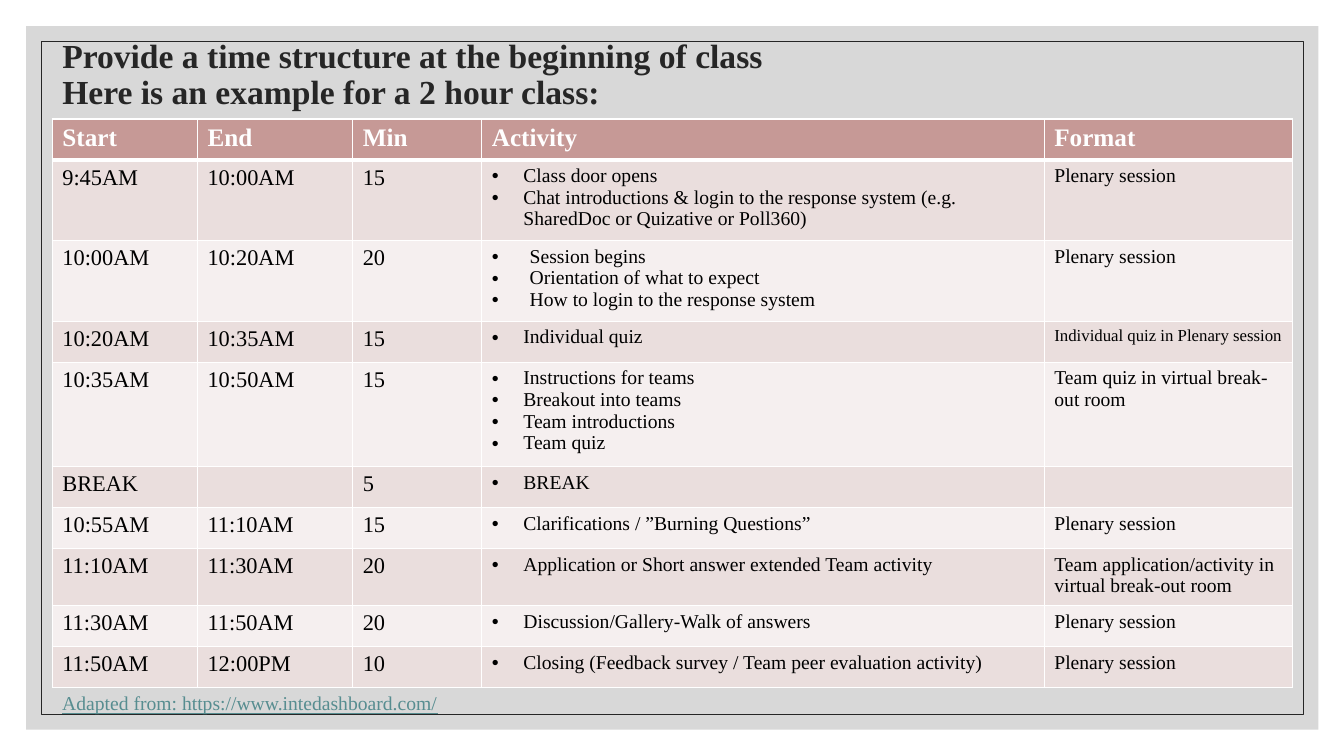
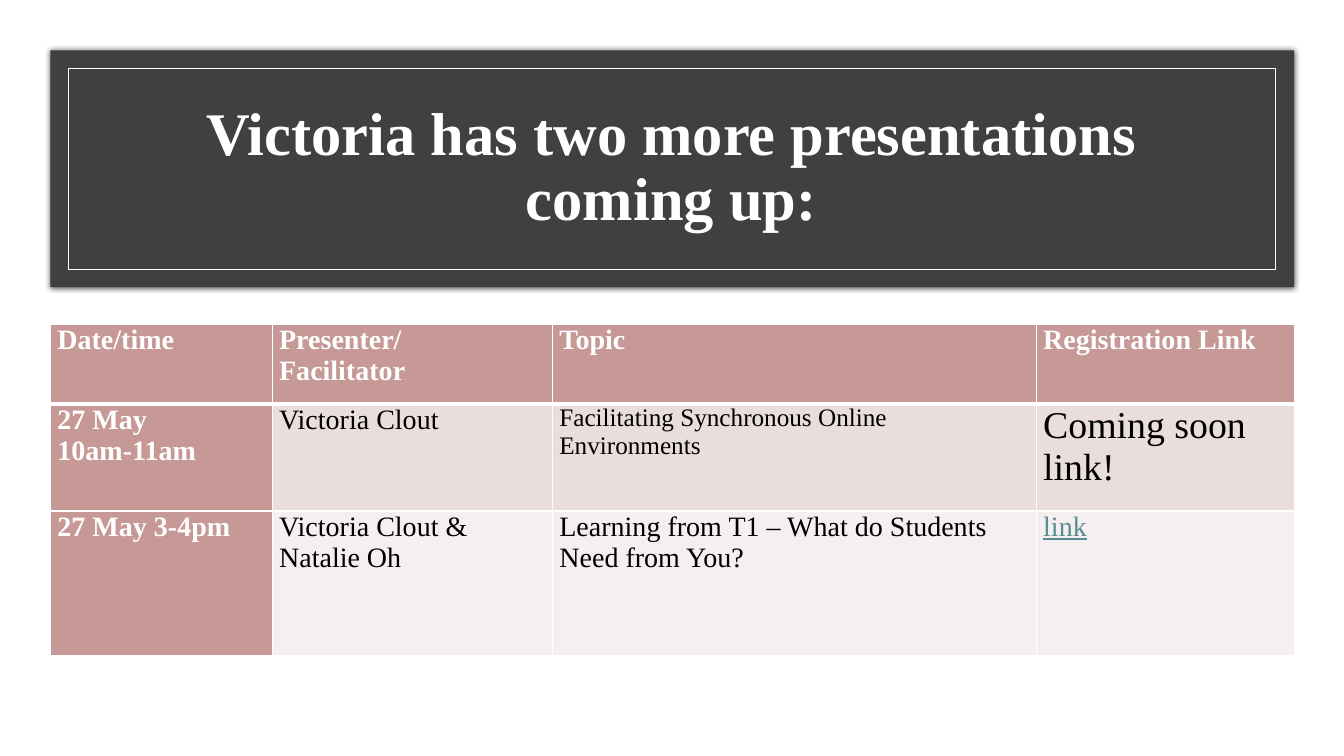
"""Build two slides: a class timetable and a list of coming talks."""
import dataclasses

import lxml.etree
import pptx
import pptx.dml.color
import pptx.enum.shapes
import pptx.enum.text
import pptx.oxml.ns
import pptx.util

Pt = pptx.util.Pt
Rgb = pptx.dml.color.RGBColor.from_string
qn = pptx.oxml.ns.qn
sub = lxml.etree.SubElement
RECT = pptx.enum.shapes.MSO_SHAPE.RECTANGLE
ALIGN = pptx.enum.text.PP_ALIGN
MIDDLE = pptx.enum.text.MSO_ANCHOR.MIDDLE


@dataclasses.dataclass(frozen=True)
class Theme:
    """Colours, font and type sizes."""
    font: str = "Times New Roman"
    white: str = "FFFFFF"
    black: str = "000000"
    ink: str = "262626"
    panel: str = "BFBFBF"
    band: str = "404040"
    head: str = "C69996"
    odd: str = "EADEDD"
    even: str = "F5EFEF"
    link: str = "578D90"
    title: float = 24
    banner: float = 43.2
    large: float = 27
    mid: float = 20
    label: float = 18
    time: float = 16
    body: float = 14
    small: float = 12


theme = Theme()


def write(frame, text, size, color, bold=False, dent=0):
    """Put styled text in a frame, bulleted if it has an indent."""
    frame.text = text
    for para in frame.paragraphs:
        if dent:
            props = para._p.get_or_add_pPr()
            props.set("marL", str(int(Pt(dent))))
            props.set("indent", str(-int(Pt(dent))))
            sub(props, qn("a:buFont"), typeface="Arial")
            sub(props, qn("a:buChar"), char="•")
        for run in para.runs:
            font = run.font
            font.name, font.size, font.bold = theme.font, Pt(size), bold
            font.color.rgb = Rgb(color)
            font.underline = color == theme.link


def grid(slide, spot, cols, rows, data, sizes, pad, side=False, dents={}, links=()):
    """Add a ruled table; sizes go by cell, then by column."""
    frame = slide.shapes.add_table(len(rows), len(cols), Pt(spot[0]), Pt(spot[1]),
                                   Pt(sum(cols)), Pt(sum(rows)))
    table = frame.table
    table.horz_banding, table.first_col = False, side
    for col, width in zip(table.columns, cols):
        col.width = Pt(width)
    for row, height in zip(table.rows, rows):
        row.height = Pt(height)
    for r, line in enumerate(data):
        for c, text in enumerate(line):
            cell = table.cell(r, c)
            cell.margin_left = cell.margin_right = Pt(pad[0])
            cell.margin_top = cell.margin_bottom = Pt(pad[1])
            for edge in "LRTB":
                thick = 3 if (r, edge) in ((0, "B"), (1, "T")) else 1
                rule = sub(cell._tc.get_or_add_tcPr(), qn("a:ln" + edge), w=str(Pt(thick)))
                sub(sub(rule, qn("a:solidFill")), qn("a:srgbClr"), val=theme.white)
            top = r == 0 or (side and c == 0)
            cell.fill.solid()
            cell.fill.fore_color.rgb = Rgb(
                theme.head if top else theme.odd if r % 2 else theme.even)
            color = theme.white if top else theme.link if (r, c) in links else theme.black
            size = sizes.get((r, c), sizes["head"] if r == 0 else sizes[c])
            write(cell.text_frame, text, size, color, top, dents.get((r, c), 0))


deck = pptx.Presentation()
deck.slide_width, deck.slide_height = Pt(960), Pt(540)
plan, talks = [deck.slides.add_slide(deck.slide_layouts[6]) for _ in range(2)]

boxes = {}
for name, slide, spot, fill, edge in (
    ("panel", plan, (18.72, 18.72, 923, 502.56), theme.panel, None),
    ("frame", plan, (29.5, 29.5, 901.4, 481), None, theme.ink),
    ("band", talks, (36, 36, 888.4, 169.2), theme.band, None),
    ("inset", talks, (48.6, 48.8, 862.6, 143.5), None, theme.white),
):
    box = slide.shapes.add_shape(RECT, *map(Pt, spot))
    box.shadow.inherit = False
    if fill:
        box.fill.solid()
        box.fill.fore_color.rgb = Rgb(fill)
    else:
        box.fill.background()
    if edge:
        box.line.color.rgb = Rgb(edge)
        box.line.width = Pt(0.5)
    else:
        box.line.fill.background()
    boxes[name] = box

tint = boxes["panel"]._element.spPr.find(qn("a:solidFill"))[0]
sub(tint, qn("a:alpha"), val="60000")
glow = sub(boxes["band"]._element.spPr.find(qn("a:effectLst")), qn("a:outerShdw"),
           blurRad=str(Pt(4)), dist="0", dir="0", algn="ctr", rotWithShape="0")
sub(sub(glow, qn("a:srgbClr"), val=theme.black), qn("a:alpha"), val="66000")

for slide, spot, text, size, color, align in (
    (plan, (37.4, 0, 838.8, 108),
     "Provide a time structure at the beginning of class\vHere is an example for a 2 hour class:",
     theme.title, theme.ink, ALIGN.LEFT),
    (talks, (83.5, 66.2, 792, 108), "Victoria has two more presentations coming up:",
     theme.banner, theme.white, ALIGN.CENTER),
):
    frame = slide.shapes.add_textbox(*map(Pt, spot)).text_frame
    frame.word_wrap = True
    frame.vertical_anchor = MIDDLE
    write(frame, text, size, color, True)
    frame.paragraphs[0].alignment = align
    frame.paragraphs[0].line_spacing = 0.9

hours = [
    ("Start", "End", "Min", "Activity", "Format"),
    ("9:45AM", "10:00AM", "15",
     "Class door opens\nChat introductions & login to the response system (e.g. "
     "SharedDoc or Quizative or Poll360)", "Plenary session"),
    ("10:00AM", "10:20AM", "20",
     "Session begins\nOrientation of what to expect\nHow to login to the response system",
     "Plenary session"),
    ("10:20AM", "10:35AM", "15", "Individual quiz", "Individual quiz in Plenary session"),
    ("10:35AM", "10:50AM", "15",
     "Instructions for teams\nBreakout into teams\nTeam introductions\nTeam quiz",
     "Team quiz in virtual break-out room"),
    ("BREAK", "", "5", "BREAK", ""),
    ("10:55AM", "11:10AM", "15", "Clarifications / ”Burning Questions”", "Plenary session"),
    ("11:10AM", "11:30AM", "20", "Application or Short answer extended Team activity",
     "Team application/activity in virtual break-out room"),
    ("11:30AM", "11:50AM", "20", "Discussion/Gallery-Walk of answers", "Plenary session"),
    ("11:50AM", "12:00PM", "10", "Closing (Feedback survey / Team peer evaluation activity)",
     "Plenary session"),
]
lines = (1, 3, 3, 1, 4, 1, 1, 2, 1, 1)
grid(plan, (37.4, 85), (103.7, 110.9, 92.2, 401.8, 177.1),
     [max(29.3, 15.5 * count + 7.2) for count in lines], hours,
     {"head": theme.label, 0: theme.time, 1: theme.time, 2: theme.time,
      3: theme.body, 4: theme.body, (3, 4): theme.small},
     (7.2, 3.6),
     dents={(r, 3): 27 if r == 2 else 22.5 for r in range(1, len(hours))})

source = plan.shapes.add_textbox(Pt(37.4), Pt(490.3), Pt(293), Pt(24.5)).text_frame
source.word_wrap = False
write(source, "Adapted from: https://www.intedashboard.com/", theme.body, theme.link)

events = [
    ("Date/time", "Presenter/\nFacilitator", "Topic", "Registration Link"),
    ("27 May 10am-11am", "Victoria Clout", "Facilitating Synchronous Online Environments",
     "Coming soon link!"),
    ("27 May 3-4pm", "Victoria Clout & Natalie Oh",
     "Learning from T1 – What do Students Need from You?", "link"),
]
grid(talks, (36, 231.8), (158.4, 200.2, 345.6, 184.3), (57, 76.3, 103), events,
     {"head": theme.mid, **dict.fromkeys(range(4), theme.mid),
      (1, 2): theme.label, (1, 3): theme.large},
     (5, 0), side=True, links=[(2, 3)])

deck.save("out.pptx")
